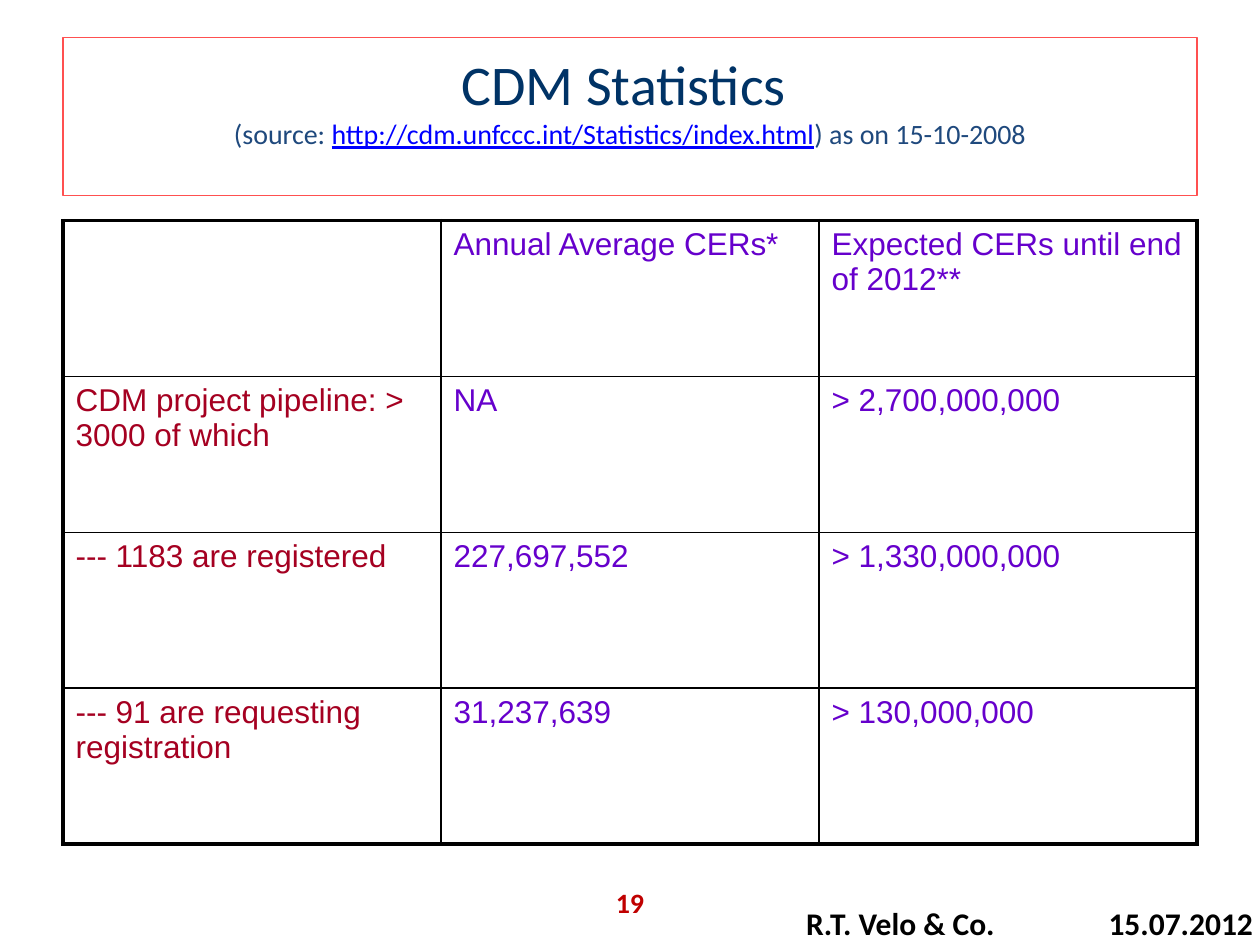
import pptx
import pptx.dml.color
import pptx.enum.shapes
import pptx.enum.text
import pptx.oxml
import pptx.oxml.ns
import pptx.util

COLOURS = {
    "navy": "003366", "steel": "1F497D", "link": "0000FF", "coral": "FF5050",
    "purple": "6600CC", "crimson": "A50021", "red": "C00000",
    "black": "000000", "white": "FFFFFF",
}
ALIGN = pptx.enum.text.PP_ALIGN
ANCHOR = pptx.enum.text.MSO_ANCHOR
NS = pptx.oxml.ns.nsdecls("a")


def rgb(name):
    return pptx.dml.color.RGBColor.from_string(COLOURS[name])


class StatisticsSlide:
    heading_font = "Calibri"
    table_font = "Arial"
    outer_border = 2.25
    inner_border = 1

    def __init__(self, deck):
        self.width, self.height = deck.slide_width, deck.slide_height
        self.slide = deck.slides.add_slide(deck.slide_layouts[6])

    def box(self, left, top, width, height):
        return (int(left * self.width), int(top * self.height),
                int(width * self.width), int(height * self.height))

    def styled_run(self, paragraph, text, colour, **formats):
        run = paragraph.add_run()
        run.text = text
        formats = {"name": self.heading_font, **formats}
        formats["size"] = pptx.util.Pt(formats["size"])
        for attribute, value in formats.items():
            setattr(run.font, attribute, value)
        run.font.color.rgb = rgb(colour)

    def title_panel(self, area, heading, source):
        panel = self.slide.shapes.add_shape(
            pptx.enum.shapes.MSO_SHAPE.RECTANGLE, *self.box(*area))
        panel.shadow.inherit = False
        panel.fill.background()
        panel.line.color.rgb = rgb("coral")
        panel.line.width = pptx.util.Pt(0.75)
        frame = panel.text_frame
        frame.vertical_anchor = ANCHOR.TOP
        frame.margin_top = pptx.util.Inches(0.09)
        paragraph = frame.paragraphs[0]
        paragraph.alignment = ALIGN.CENTER
        self.styled_run(paragraph, heading, "navy", size=32)
        paragraph.add_line_break()
        for text, colour, underline in source:
            self.styled_run(paragraph, text, colour, size=16, underline=underline)

    def label(self, area, text, colour, size, anchor=ANCHOR.TOP,
              alignment=ALIGN.LEFT, tab=None):
        frame = self.slide.shapes.add_textbox(*self.box(*area)).text_frame
        frame.word_wrap = True
        frame.vertical_anchor = anchor
        paragraph = frame.paragraphs[0]
        paragraph.alignment = alignment
        if tab:
            position = pptx.util.Inches(tab)
            paragraph._p.get_or_add_pPr().append(pptx.oxml.parse_xml(
                f'<a:tabLst {NS}><a:tab pos="{position}" algn="l"/></a:tabLst>'))
        self.styled_run(paragraph, text, colour, size=size, bold=True)

    def border(self, cell, edges):
        properties = cell._tc.get_or_add_tcPr()
        for index, (side, is_outer) in enumerate(edges.items()):
            width = pptx.util.Pt(self.outer_border if is_outer else self.inner_border)
            properties.insert(index, pptx.oxml.parse_xml(
                f'<a:{side} {NS} w="{width}"><a:solidFill>'
                f'<a:srgbClr val="{COLOURS["black"]}"/></a:solidFill></a:{side}>'))

    def table(self, area, rows):
        last_row, last_column = len(rows) - 1, len(rows[0]) - 1
        grid = self.slide.shapes.add_table(
            len(rows), len(rows[0]), *self.box(*area)).table
        for r, row in enumerate(rows):
            for c, text in enumerate(row):
                cell = grid.cell(r, c)
                cell.fill.solid()
                cell.fill.fore_color.rgb = rgb("white")
                self.border(cell, {"lnL": c == 0, "lnR": c == last_column,
                                   "lnT": r == 0, "lnB": r == last_row})
                if text:
                    paragraph = cell.text_frame.paragraphs[0]
                    paragraph.space_before = pptx.util.Pt(3.6)
                    self.styled_run(paragraph, text, "purple" if c else "crimson",
                                    name=self.table_font, size=18)


def main():
    deck = pptx.Presentation()
    deck.slide_width = pptx.util.Inches(10)
    deck.slide_height = pptx.util.Inches(7.5)
    page = StatisticsSlide(deck)
    page.title_panel((0.05, 0.04, 0.9, 1 / 6), "CDM Statistics ", [
        ("(source: ", "steel", False),
        ("http://cdm.unfccc.int/Statistics/index.html", "link", True),
        (") as on 15-10-2008", "steel", False),
    ])
    page.table((0.05, 7 / 30, 0.9, 0.66), [
        ("", "Annual Average CERs*", "Expected CERs until end of 2012**"),
        ("CDM project pipeline: > 3000 of which", "NA", "> 2,700,000,000"),
        ("--- 1183 are registered", "227,697,552", "> 1,330,000,000"),
        ("--- 91 are requesting registration", "31,237,639", "> 130,000,000"),
    ])
    page.label((0.63, 0.95, 0.4, 0.05), "R.T. Velo & Co.\t15.07.2012",
               "black", 18, tab=2.4)
    page.label((0.34, 0.93, 0.32, 0.05), "19", "red", 16,
               anchor=ANCHOR.MIDDLE, alignment=ALIGN.CENTER)
    deck.save("out.pptx")


if __name__ == "__main__":
    main()
